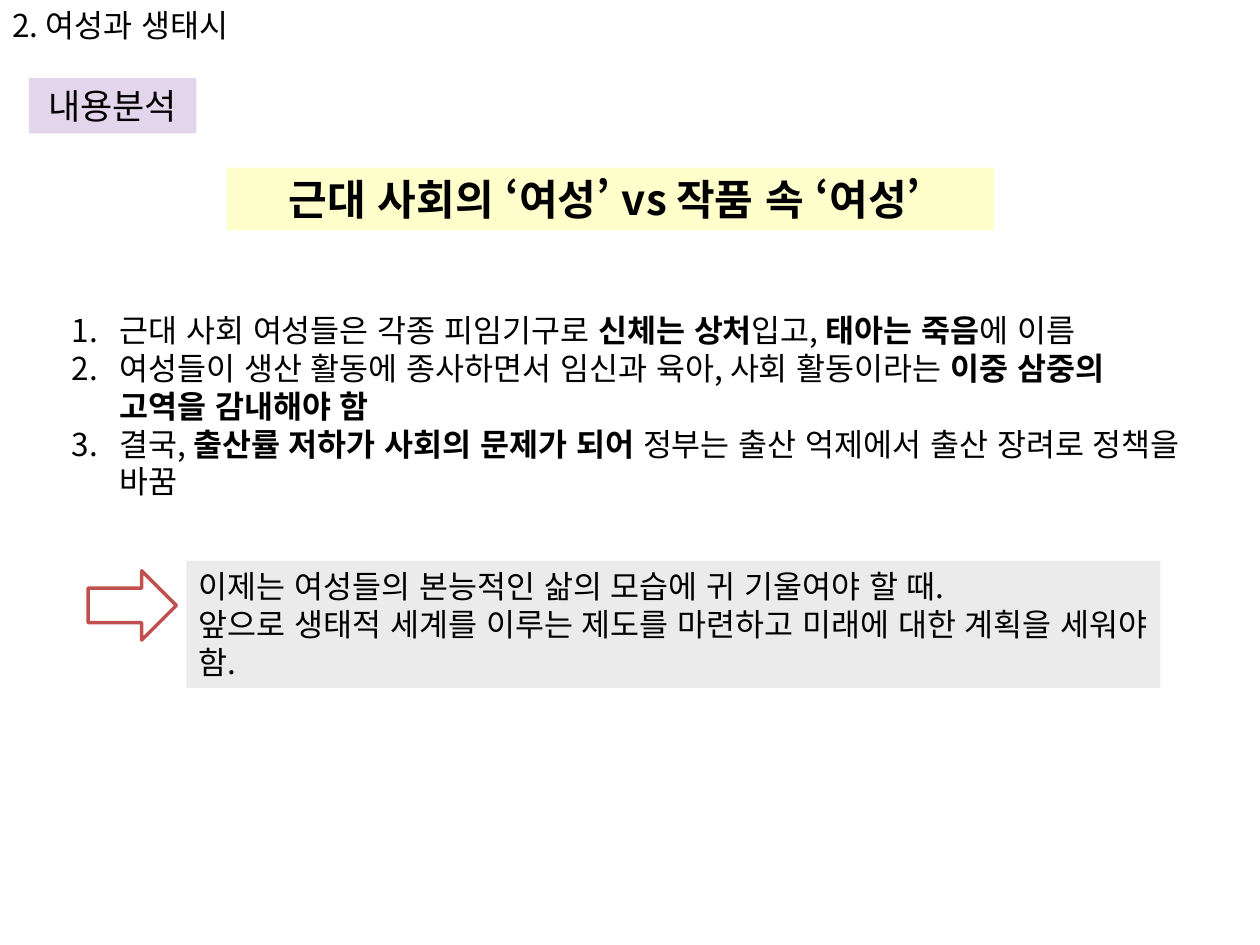
from lxml.etree import SubElement
from pptx import Presentation
from pptx.dml.color import RGBColor
from pptx.enum.lang import MSO_LANGUAGE_ID
from pptx.enum.shapes import MSO_SHAPE
from pptx.enum.text import MSO_ANCHOR, MSO_AUTO_SIZE, PP_ALIGN
from pptx.oxml.ns import qn
from pptx.util import Inches, Pt

FONT = "Noto Sans CJK KR"
BLACK = RGBColor(0x00, 0x00, 0x00)
WHITE = RGBColor(0xFF, 0xFF, 0xFF)
YELLOW = RGBColor(0xFF, 0xFF, 0x99)
PURPLE = RGBColor(0x70, 0x30, 0xA0)
GRAY = RGBColor(0xD9, 0xD9, 0xD9)
RED = RGBColor(0xC0, 0x50, 0x4D)

POINTS = [
    "근대 사회 여성들은 각종 피임기구로 *신체는 상처*입고, *태아는 죽음*에 이름",
    "여성들이 생산 활동에 종사하면서 임신과 육아, 사회 활동이라는 *이중 삼중의 고역을 감내해야 함*",
    "결국, *출산률 저하가 사회의 문제가 되어* 정부는 출산 억제에서 출산 장려로 정책을 바꿈",
]
CLOSING = [
    "이제는 여성들의 본능적인 삶의 모습에 귀 기울여야 할 때.",
    "앞으로 생태적 세계를 이루는 제도를 마련하고 미래에 대한 계획을 세워야 함.",
]


def number(para):
    props = para._p.get_or_add_pPr()
    props.set("marL", str(Inches(0.38)))
    props.set("indent", str(-Inches(0.38)))
    SubElement(props, qn("a:buFont"), typeface="+mj-lt")
    SubElement(props, qn("a:buAutoNum"), type="arabicPeriod")


def write(shape, lines, size=18, bold=False, align=PP_ALIGN.LEFT,
          wrap=True, numbered=False):
    """Fill a shape with paragraphs; asterisks enclose bold words."""
    frame = shape.text_frame
    frame.word_wrap = wrap
    frame.auto_size = MSO_AUTO_SIZE.SHAPE_TO_FIT_TEXT
    frame.vertical_anchor = MSO_ANCHOR.TOP
    for i, line in enumerate(lines):
        para = frame.add_paragraph() if i else frame.paragraphs[0]
        para.alignment = align
        if numbered:
            number(para)
        for j, part in enumerate(line.split("*")):
            if not part:
                continue
            run = para.add_run()
            run.text = part
            font = run.font
            font.name, font.size = FONT, Pt(size)
            font.bold = bold or j % 2 == 1
            font.color.rgb = BLACK
            # Korean text keeps its quotation marks narrow
            font.language_id = MSO_LANGUAGE_ID.KOREAN
            SubElement(run._r.get_or_add_rPr(), qn("a:ea"), typeface=FONT)


def add_text(slide, box, lines, **style):
    write(slide.shapes.add_textbox(*map(Inches, box)), lines, **style)


def add_block(slide, kind, box, color, alpha=100):
    """Add a borderless filled shape; alpha is its opacity in percent."""
    shape = slide.shapes.add_shape(kind, *map(Inches, box))
    shape.shadow.inherit = False
    shape.fill.solid()
    shape.fill.fore_color.rgb = color
    shape.line.fill.background()
    if alpha < 100:
        tone = shape._element.spPr.find(".//" + qn("a:srgbClr"))
        SubElement(tone, qn("a:alpha"), val=str(alpha * 1000))
    return shape


def add_panel(slide, box, lines, color, alpha, **style):
    write(add_block(slide, MSO_SHAPE.RECTANGLE, box, color, alpha),
          lines, **style)


def add_closing(slide, box):
    """Place an arrow and, to its right, the closing panel."""
    left, top, width, height = box
    arrow = add_block(slide, MSO_SHAPE.RIGHT_ARROW,
                      (left, top + 0.08, 0.7, 0.55), WHITE)
    arrow.line.color.rgb = RED
    arrow.line.width = Pt(2)
    shift = 0.78
    add_panel(slide, (left + shift, top, width - shift, height),
              CLOSING, GRAY, 50)


def main():
    deck = Presentation()
    deck.slide_width, deck.slide_height = Inches(10), Inches(7.5)
    slide = deck.slides.add_slide(deck.slide_layouts[6])
    add_text(slide, (0, 0, 2.16, 0.4), ["2. 여성과 생태시"], wrap=False)
    add_panel(slide, (1.8, 1.33, 6.09, 0.5),
              ["근대 사회의 ‘여성’ vs 작품 속 ‘여성’ "], YELLOW, 50,
              size=24, bold=True, align=PP_ALIGN.CENTER)
    add_text(slide, (0.47, 2.42, 9.06, 1.92), POINTS, numbered=True)
    add_closing(slide, (0.7, 4.45, 8.51, 1.01))
    add_panel(slide, (0.23, 0.62, 1.33, 0.44), ["내용분석"], PURPLE, 20,
              size=20, align=PP_ALIGN.CENTER)
    deck.save("out.pptx")


if __name__ == "__main__":
    main()
